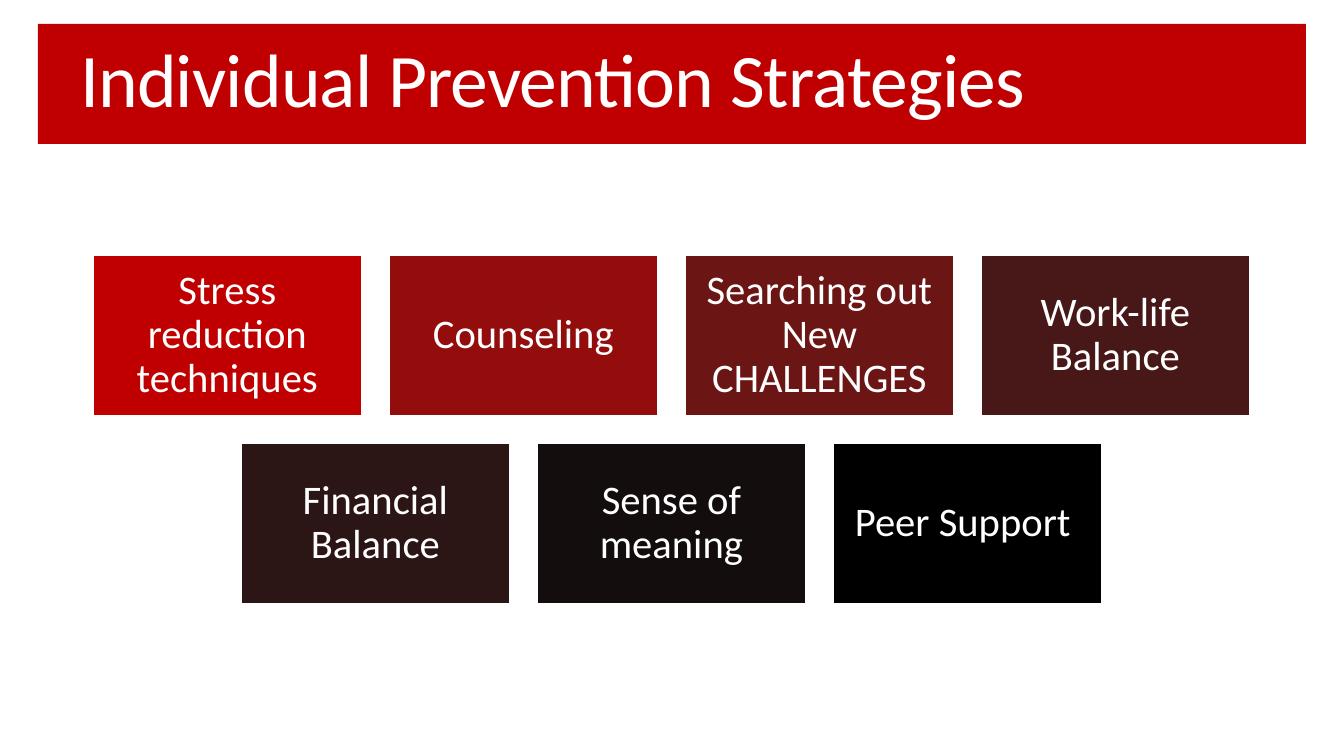
from dataclasses import dataclass

from pptx import Presentation
from pptx.dml.color import RGBColor
from pptx.enum.shapes import MSO_SHAPE
from pptx.enum.text import MSO_ANCHOR, MSO_AUTO_SIZE, PP_ALIGN
from pptx.util import Emu, Pt

RECTANGLE = MSO_SHAPE.RECTANGLE
MIDDLE = MSO_ANCHOR.MIDDLE
NO_AUTOFIT = MSO_AUTO_SIZE.NONE
LEFT, CENTER = PP_ALIGN.LEFT, PP_ALIGN.CENTER

EMU_PER_PX = 914400 / 100.8
PAGE_WIDTH, PAGE_HEIGHT = 1344, 756

# Tile grid
TILE_WIDTH, TILE_HEIGHT, TILE_GAP = 269, 161, 27
GRID_TOP = 255
STRATEGY_ROWS = [
    [("Stress reduction techniques", "C00000"),
     ("Counseling", "930D0D"),
     ("Searching out New CHALLENGES", "6B1515"),
     ("Work-life Balance", "481818")],
    [("Financial Balance", "2B1515"),
     ("Sense of meaning", "130D0D"),
     ("Peer Support ", "000000")],
]


def px(length):
    return Emu(round(length * EMU_PER_PX))


@dataclass(frozen=True)
class Theme:
    font: str = "Calibri"
    banner: str = "C00000"
    light: str = "FFFFFF"
    title_size: float = 54
    tile_size: float = 29
    outline: float = 0.85
    tile_inset: int = 12
    line_spacing: float = 0.9


class SlideBuilder:
    def __init__(self, page, theme):
        self.page = page
        self.theme = theme

    def rectangle(self, left, top, width, height, fill):
        box = self.page.shapes.add_shape(
            RECTANGLE, px(left), px(top), px(width), px(height))
        box.shadow.inherit = False
        box.fill.solid()
        box.fill.fore_color.rgb = RGBColor.from_string(fill)
        return box

    def set_text(self, box, text, size, align):
        frame = box.text_frame
        frame.word_wrap = True
        frame.auto_size = NO_AUTOFIT
        frame.vertical_anchor = MIDDLE
        para = frame.paragraphs[0]
        span = para.add_run()
        span.text = text
        para.alignment = align
        para.line_spacing = self.theme.line_spacing
        para.font.name = self.theme.font
        para.font.size = Pt(size)
        para.font.color.rgb = RGBColor.from_string(self.theme.light)
        return span

    def banner(self, left, top, width, height):
        box = self.rectangle(left, top, width, height, self.theme.banner)
        box.line.fill.background()

    def title(self, text, left, top, width, height):
        box = self.page.shapes.title
        box.left, box.top = px(left), px(top)
        box.width, box.height = px(width), px(height)
        span = self.set_text(box, text, self.theme.title_size, LEFT)
        # Tighten the letters, then lift the title above the banner
        span.font._element.set("spc", "-60")
        self.page.shapes._spTree.append(box._element)

    def tile(self, text, left, top, fill):
        box = self.rectangle(left, top, TILE_WIDTH, TILE_HEIGHT, fill)
        box.line.color.rgb = RGBColor.from_string(self.theme.light)
        box.line.width = Pt(self.theme.outline)
        frame = box.text_frame
        frame.margin_left = frame.margin_right = px(self.theme.tile_inset)
        frame.margin_top = frame.margin_bottom = px(self.theme.tile_inset)
        self.set_text(box, text, self.theme.tile_size, CENTER)

    def tile_row(self, tiles, top):
        pitch = TILE_WIDTH + TILE_GAP
        left = (PAGE_WIDTH - len(tiles) * pitch + TILE_GAP) // 2
        for column, (text, fill) in enumerate(tiles):
            self.tile(text, left + column * pitch, top, fill)


def main():
    deck = Presentation()
    deck.slide_width, deck.slide_height = px(PAGE_WIDTH), px(PAGE_HEIGHT)
    title_only = deck.slide_layouts[5]
    builder = SlideBuilder(deck.slides.add_slide(title_only), Theme())

    # Heading
    builder.banner(38, 24, 1268, 120)
    builder.title("Individual Prevention Strategies", 70, 33, 1163, 100)

    # Strategies, each row centred on the page
    for row, tiles in enumerate(STRATEGY_ROWS):
        builder.tile_row(tiles, GRID_TOP + row * (TILE_HEIGHT + TILE_GAP))

    deck.save("out.pptx")


if __name__ == "__main__":
    main()
